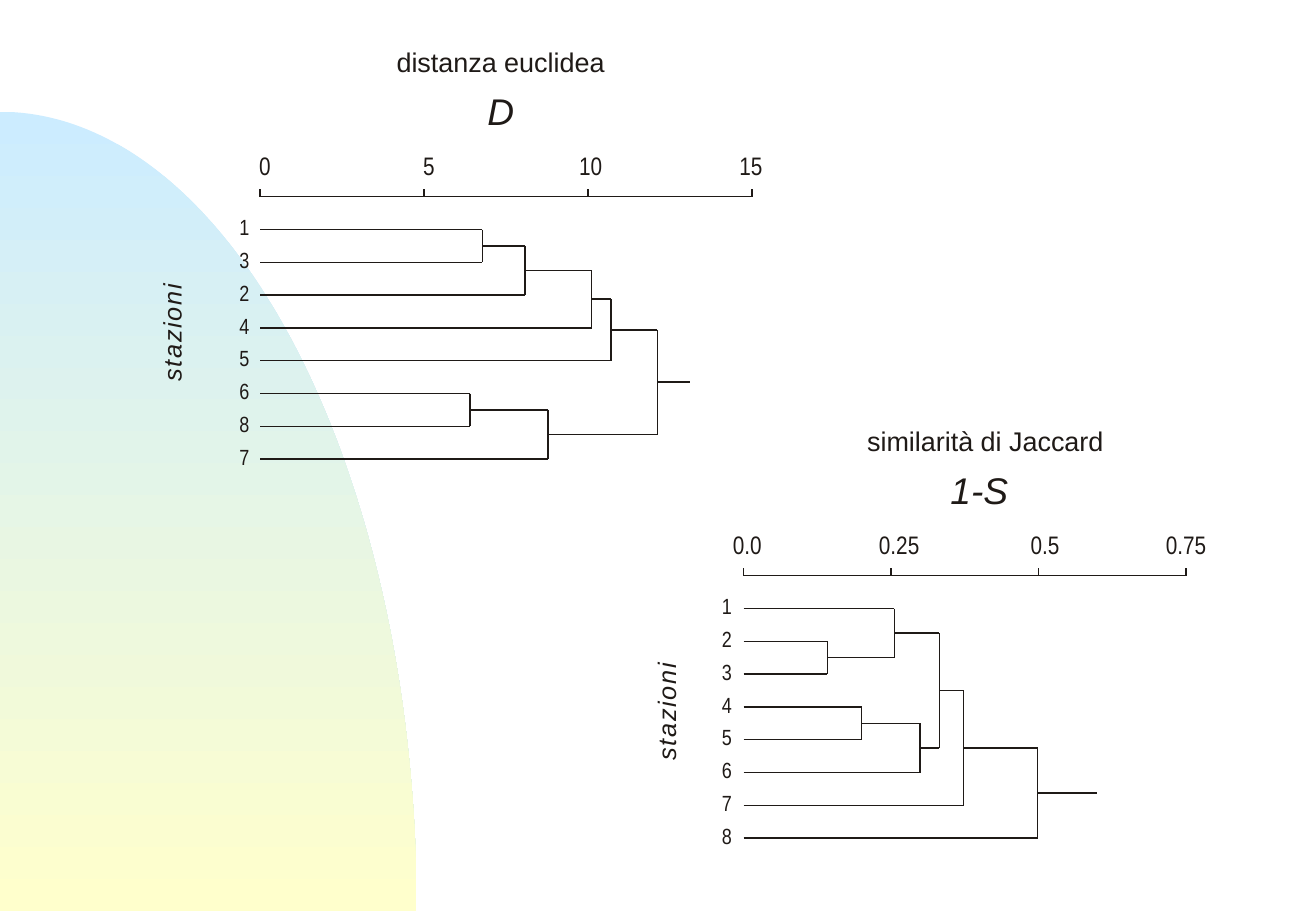
"""Slide with two dendrograms of eight stations, by Euclidean distance and by Jaccard similarity."""
import math
from lxml import etree
from pptx import Presentation
from pptx import util as u
from pptx.dml.color import RGBColor
from pptx.enum import shapes, text
from pptx.oxml.ns import qn

hues = {"ink": "1F1A17", "sky": "CCECFF", "sand": "FFFFCC"}
step = 0.27


def put_text(group, words, mid_x, mid_y, wide, high, size, font="Arial", slant=False, turn=0, gap=0):
    box = group.shapes.add_textbox(u.Inches(mid_x - wide / 2), u.Inches(mid_y - high / 2),
                                   u.Inches(wide), u.Inches(high))
    box.rotation = turn
    frame = box.text_frame
    frame.margin_left = frame.margin_right = frame.margin_top = frame.margin_bottom = 0
    frame.word_wrap = False
    frame.auto_size = text.MSO_AUTO_SIZE.SHAPE_TO_FIT_TEXT
    para = frame.paragraphs[0]
    para.alignment = text.PP_ALIGN.CENTER
    para.line_spacing = 0.75
    run = para.add_run()
    run.text = words
    run.font.name = font
    run.font.size = u.Pt(size)
    run.font.italic = slant
    run.font.color.rgb = RGBColor.from_string(hues["ink"])
    if gap:
        run.font._element.set("spc", str(gap))


def put_line(group, x1, y1, x2, y2):
    line = group.shapes.add_connector(shapes.MSO_CONNECTOR.STRAIGHT, u.Inches(x1), u.Inches(y1),
                                      u.Inches(x2), u.Inches(y2))
    line.line.color.rgb = RGBColor.from_string(hues["ink"])
    line.line.width = u.Pt(0.88)
    etree.SubElement(line._element.spPr, qn("a:effectLst"))


deck = Presentation()
deck.slide_width = u.Inches(10.83)
deck.slide_height = u.Inches(7.5)
slide = deck.slides.add_slide(deck.slide_layouts[6])

angles = [math.radians(deg) for deg in range(91)]
curve = [(u.Inches(3.43 * math.sin(a)), u.Inches(7.5 - 6.58 * math.cos(a))) for a in angles]
build = slide.shapes.build_freeform(*curve[0])
build.add_line_segments(curve[1:] + [(0, u.Inches(7.5))], close=True)
arc = build.convert_to_shape()
arc.shadow.inherit = False
arc.line.fill.background()
arc.fill.gradient()
arc.fill.gradient_angle = 270
for stop, hue, place in zip(arc.fill.gradient_stops, ("sky", "sand"), (0, 1)):
    stop.color.rgb = RGBColor.from_string(hues[hue])
    stop.position = place

trees = [
    dict(title="distanza euclidea", title_x=4.12, title_w=1.8,
         sign="D", sign_x=4.12, sign_w=0.22, side_x=1.44, label_x=2.01,
         left=2.14, right=6.19, axis=1.62, end=5.68, leaves="13245687",
         ticks=[("0", 2.18), ("5", 3.53), ("10", 4.86), ("15", 6.18)],
         joins=[("1", "3", 3.97), ("13", "2", 4.32), ("132", "4", 4.87), ("1324", "5", 5.03),
                ("6", "8", 3.87), ("68", "7", 4.51), ("13245", "687", 5.41)]),
    dict(title="similarità di Jaccard", title_x=8.11, title_w=2,
         sign="1-S", sign_x=8.06, sign_w=0.5, side_x=5.51, label_x=5.98,
         left=6.12, right=9.76, axis=4.74, end=9.03, leaves="12345678",
         ticks=[("0.0", 6.15), ("0.25", 7.4), ("0.5", 8.6), ("0.75", 9.76)],
         joins=[("2", "3", 6.81), ("1", "23", 7.36), ("4", "5", 7.09), ("45", "6", 7.57),
                ("123", "456", 7.73), ("123456", "7", 7.93), ("1234567", "8", 8.54)]),
]

for tree in trees:
    group = slide.shapes.add_group_shape()
    left, right, axis = tree["left"], tree["right"], tree["axis"]
    put_text(group, tree["title"], tree["title_x"], axis - 1.08, tree["title_w"], 0.2, 16)
    put_text(group, tree["sign"], tree["sign_x"], axis - 0.67, tree["sign_w"], 0.28, 22, slant=True)
    put_text(group, "stazioni", tree["side_x"], axis + 1.12, 0.95, 0.19, 15, slant=True, turn=270, gap=100)

    put_line(group, left, axis, right, axis)
    for i, (label, label_x) in enumerate(tree["ticks"]):
        tick = left + (right - left) * i / 3
        put_line(group, tick, axis, tick, axis - 0.06)
        put_text(group, label, label_x, axis - 0.23, 0.11 * len(label), 0.19, 15, "Arial Narrow")

    nodes = {}
    for i, leaf in enumerate(tree["leaves"], 1):
        nodes[leaf] = (left, axis + step * i)
        put_text(group, leaf, tree["label_x"], axis + step * i, 0.08, 0.16, 13, "Arial Narrow")
    for one, two, x in tree["joins"]:
        (x1, y1), (x2, y2) = nodes[one], nodes[two]
        put_line(group, x1, y1, x, y1)
        put_line(group, x2, y2, x, y2)
        put_line(group, x, y1, x, y2)
        nodes[one + two] = (x, (y1 + y2) / 2)
    root_x, root_y = nodes[tree["leaves"]]
    put_line(group, root_x, root_y, tree["end"], root_y)

deck.save("out.pptx")
